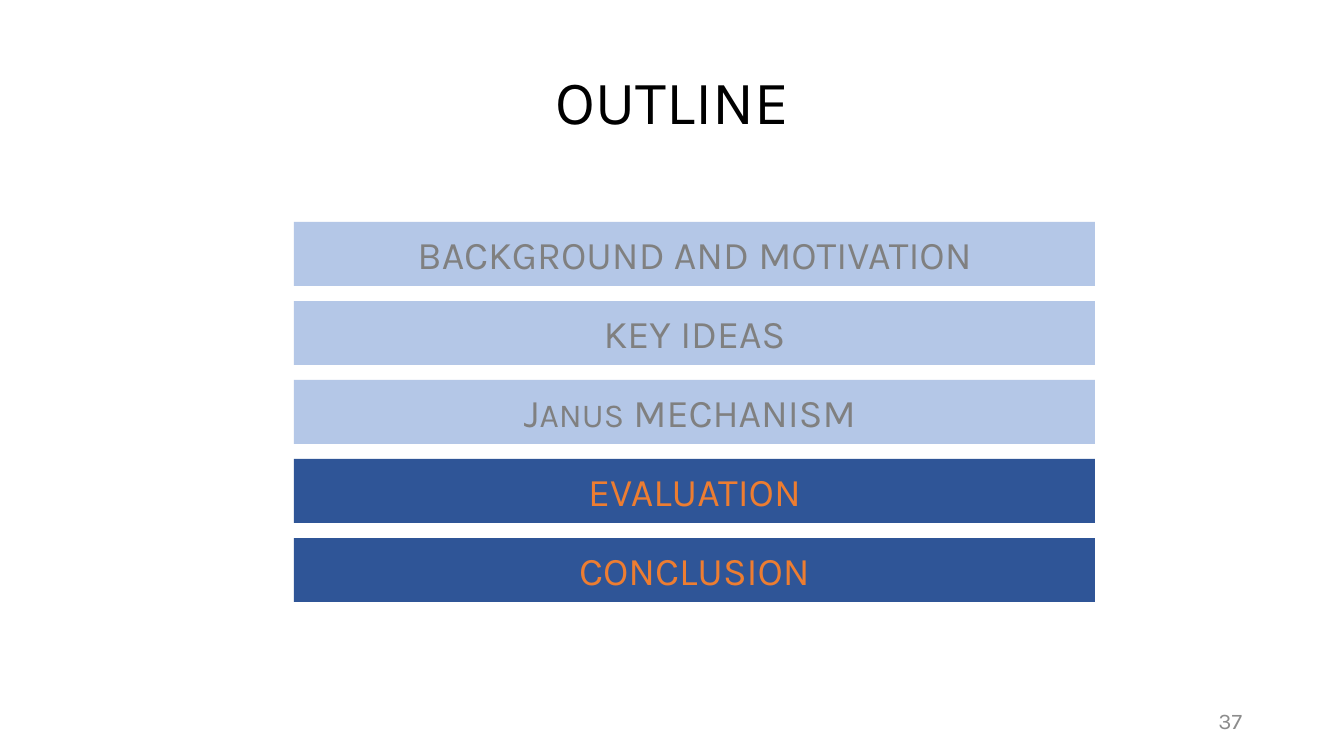
from pptx import Presentation
from pptx.dml.color import RGBColor as RGB
from pptx.enum.shapes import MSO_SHAPE as SHAPE
from pptx.enum.text import MSO_ANCHOR as ANCHOR, PP_ALIGN as ALIGN
from pptx.util import Emu, Pt

FONT = "Karla"
COLORS = {
    "title": "000000",
    "number": "8C8C8C",
    "done_fill": "B4C7E7",
    "done_text": "808080",
    "next_fill": "2F5597",
    "next_text": "ED7D31",
}
BAR_LEFT, BAR_TOP, BAR_WIDTH, BAR_HEIGHT, BAR_STEP = 294, 222, 801, 64, 79
TOPICS = [
    ([("BACKGROUND AND MOTIVATION", 28)], "done"),
    ([("KEY IDEAS", 28)], "done"),
    ([("J", 28), ("ANUS", 24), (" MECHANISM ", 28)], "done"),
    ([("EVALUATION", 28)], "next"),
    ([("CONCLUSION", 28)], "next"),
]


def px(n):
    """Turn pixels into EMU."""
    return Emu(round(n * 914400 / 100.8))


def color(name):
    """Look up a named colour."""
    return RGB.from_string(COLORS[name])


def write(s, runs, fill, align=ALIGN.CENTER, spacing=None):
    """Write (text, size) runs as one paragraph in a shape."""
    tf = s.text_frame
    tf.word_wrap = True
    tf.vertical_anchor = ANCHOR.MIDDLE
    p = tf.paragraphs[0]
    p.alignment = align
    p.line_spacing = spacing
    for text, size in runs:
        r = p.add_run()
        r.text = text
        r.font.name = FONT
        r.font.size = Pt(size)
        r.font.color.rgb = color(fill)


def add_label(slide, box, runs, fill, **fmt):
    """Add a text box."""
    s = slide.shapes.add_textbox(*map(px, box))
    write(s, runs, fill, **fmt)


def add_bar(slide, box, runs, state):
    """Add a topic bar coloured by its state."""
    s = slide.shapes.add_shape(SHAPE.RECTANGLE, *map(px, box))
    s.shadow.inherit = False
    s.fill.solid()
    s.fill.fore_color.rgb = color(f"{state}_fill")
    s.line.fill.background()
    write(s, runs, f"{state}_text")


def main():
    """Build the outline slide."""
    prs = Presentation()
    prs.slide_width, prs.slide_height = px(1344), px(756)
    slide = prs.slides.add_slide(prs.slide_layouts[6])
    add_label(slide, (93, 32, 1159, 146), [("OUTLINE", 44)], "title", spacing=0.9)
    for i, (runs, state) in enumerate(TOPICS):
        box = (BAR_LEFT, BAR_TOP + i * BAR_STEP, BAR_WIDTH, BAR_HEIGHT)
        add_bar(slide, box, runs, state)
    add_label(slide, (950, 701, 302, 40), [("37", 16)], "number", align=ALIGN.RIGHT)
    prs.save("out.pptx")


if __name__ == "__main__":
    main()
